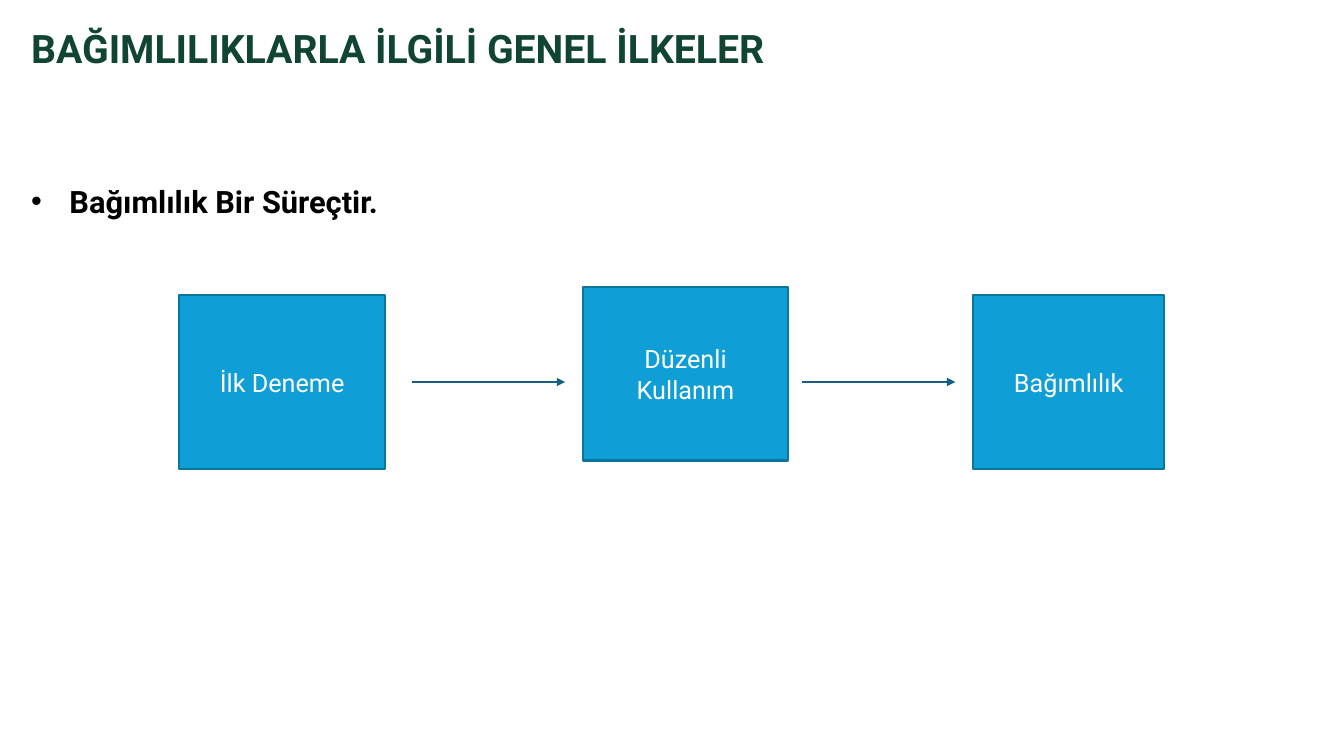
import pptx
import pptx.dml.color
import pptx.enum.shapes
import pptx.enum.text
import pptx.oxml
import pptx.oxml.ns
import pptx.util

# The page is a grid of 100 columns by 100 rows
WIDTH = pptx.util.Inches(13.33)
HEIGHT = pptx.util.Inches(7.5)
FONT = "Roboto"
MARGIN = 1.58
STAGE_TOP = 39.07
STAGE_HEIGHT = 22.93
ARROW_LENGTH = 11.37

# Text, left, top and width of each stage
STAGES = [
    ("İlk Deneme", 13.35, STAGE_TOP, 15.3),
    ("Düzenli Kullanım", 43.36, 38, 15.3),
    ("Bağımlılık", 72.39, STAGE_TOP, 14.25),
]
ARROW_STARTS = [30.68, 59.71]


def columns(count):
    return round(WIDTH * count / 100)


def rows(count):
    return round(HEIGHT * count / 100)


def color(code):
    return pptx.dml.color.RGBColor.from_string(code)


def add_xml(parent, tag, **attributes):
    element = pptx.oxml.parse_xml(f"<a:{tag} {pptx.oxml.ns.nsdecls('a')}/>")
    for name, value in attributes.items():
        element.set(name, value)
    parent.append(element)


def write(para, text, size, ink, bold=False):
    span = para.add_run()
    span.text = text
    span.font.name = FONT
    span.font.size = pptx.util.Pt(size)
    span.font.bold = bold
    span.font.color.rgb = color(ink)


def add_text(page, top, width, height, text, size, ink):
    box = page.shapes.add_textbox(columns(MARGIN), rows(top), columns(width), rows(height))
    box.text_frame.word_wrap = True
    para = box.text_frame.paragraphs[0]
    write(para, text, size, ink, bold=True)
    return para


def make_bullet(para):
    para.alignment = pptx.enum.text.PP_ALIGN.JUSTIFY
    para.line_spacing = 1.5
    indent = pptx.util.Inches(0.38)
    properties = para._p.get_or_add_pPr()
    properties.set("marL", str(indent))
    properties.set("indent", str(-indent))
    add_xml(properties, "buFont", typeface="Arial")
    add_xml(properties, "buChar", char="•")


def add_stage(group, text, left, top, width):
    box = group.shapes.add_shape(
        pptx.enum.shapes.MSO_SHAPE.RECTANGLE,
        columns(left), rows(top), columns(width), rows(STAGE_HEIGHT))
    box.shadow.inherit = False
    box.fill.solid()
    box.fill.fore_color.rgb = color("0F9ED5")
    box.line.color.rgb = color("0B759E")
    box.line.width = pptx.util.Pt(1.5)
    frame = box.text_frame
    frame.word_wrap = True
    frame.margin_left = frame.margin_right = pptx.util.Inches(0.15)
    frame.vertical_anchor = pptx.enum.text.MSO_ANCHOR.MIDDLE
    para = frame.paragraphs[0]
    para.alignment = pptx.enum.text.PP_ALIGN.CENTER
    write(para, text, 18, "FFFFFF")


def add_arrow(group, start):
    middle = rows(STAGE_TOP + STAGE_HEIGHT / 2)
    arrow = group.shapes.add_connector(
        pptx.enum.shapes.MSO_CONNECTOR.STRAIGHT,
        columns(start), middle, columns(start + ARROW_LENGTH), middle)
    arrow.line.color.rgb = color("156082")
    arrow.line.width = pptx.util.Pt(1)
    add_xml(arrow.line._get_or_add_ln(), "tailEnd", type="triangle")
    add_xml(arrow._element.spPr, "effectLst")


def main():
    deck = pptx.Presentation()
    deck.slide_width = WIDTH
    deck.slide_height = HEIGHT
    page = deck.slides.add_slide(deck.slide_layouts[6])

    # Title and statement
    add_text(page, 2.53, 79.37, 7.6, "BAĞIMLILIKLARLA İLGİLİ GENEL İLKELER", 28, "114533")
    make_bullet(add_text(page, 21.07, 46.89, 8, "Bağımlılık Bir Süreçtir.", 22, "000000"))

    # Process from first try to addiction
    process = page.shapes.add_group_shape()
    for stage in STAGES:
        add_stage(process, *stage)
    for start in ARROW_STARTS:
        add_arrow(process, start)

    deck.save("out.pptx")


if __name__ == "__main__":
    main()
